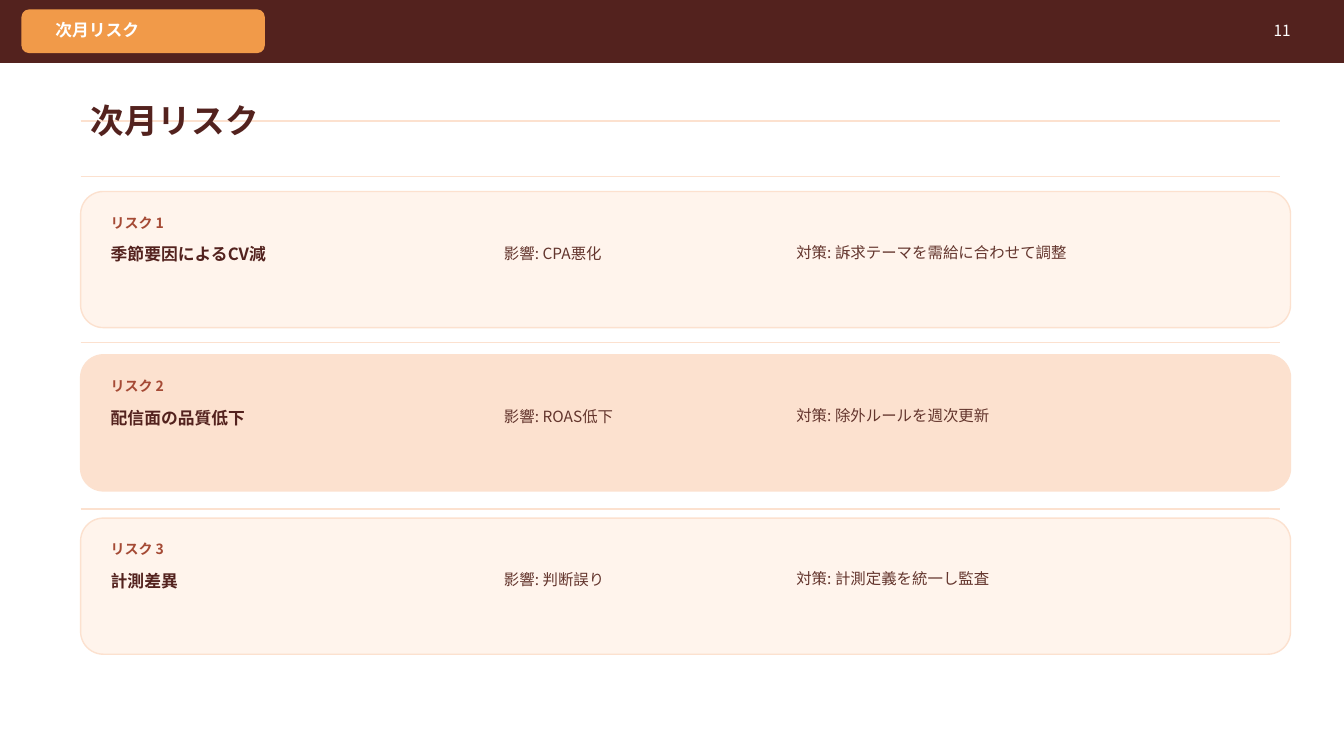
from pptx import Presentation
from pptx.dml.color import RGBColor
from pptx.enum.shapes import MSO_CONNECTOR, MSO_SHAPE
from pptx.enum.text import MSO_ANCHOR, MSO_AUTO_SIZE, PP_ALIGN
from pptx.oxml.ns import qn
from pptx.util import Inches, Pt

LEFT, RIGHT = PP_ALIGN.LEFT, PP_ALIGN.RIGHT
TOP, MIDDLE = MSO_ANCHOR.TOP, MSO_ANCHOR.MIDDLE
RECTANGLE, ROUNDED = MSO_SHAPE.RECTANGLE, MSO_SHAPE.ROUNDED_RECTANGLE
STRAIGHT = MSO_CONNECTOR.STRAIGHT
NO_AUTOFIT = MSO_AUTO_SIZE.NONE

BODY_FONT, TITLE_FONT = "Noto Sans CJK JP", "Karla"
BROWN, ORANGE, WHITE = "53221E", "F19A49", "FFFFFF"
CREAM, PEACH, RUST, TEXT_BROWN = "FFF4EC", "FCE1CF", "A54A35", "63352D"

SLIDE_WIDTH, SLIDE_HEIGHT = 13.33, 7.5
MARGIN = 0.8
CARD_TOP, CARD_WIDTH, CARD_HEIGHT, CARD_STEP = 1.9, 12, 1.35, 1.62
RULE_WIDTH = 11.9
RULE_TOPS = [1.2] + [1.75 + 1.65 * index for index in range(3)]

RISKS = [
    ("季節要因によるCV減", "CPA悪化", "訴求テーマを需給に合わせて調整", CREAM),
    ("配信面の品質低下", "ROAS低下", "除外ルールを週次更新", PEACH),
    ("計測差異", "判断誤り", "計測定義を統一し監査", CREAM),
]


def color(hex_string):
    return RGBColor.from_string(hex_string)


def format_text(shape, text, size=11, fill=TEXT_BROWN, bold=False,
                font_name=BODY_FONT, align=LEFT, anchor=MIDDLE):
    frame = shape.text_frame
    frame.word_wrap = True
    frame.auto_size = NO_AUTOFIT
    frame.vertical_anchor = anchor
    paragraph = frame.paragraphs[0]
    paragraph.alignment = align
    run = paragraph.add_run()
    run.text = text
    font = run.font
    font.name, font.size, font.bold = font_name, Pt(size), bold
    font.color.rgb = color(fill)
    # Japanese glyphs take the East Asian font
    east_asian = run._r.get_or_add_rPr().makeelement(qn("a:ea"), {"typeface": BODY_FONT})
    run._r.rPr.find(qn("a:latin")).addnext(east_asian)


def add_text(slide, text, left, top, width, height, **text_format):
    box = slide.shapes.add_textbox(Inches(left), Inches(top), Inches(width), Inches(height))
    format_text(box, text, **text_format)


def add_panel(slide, kind, left, top, width, height, fill, line):
    panel = slide.shapes.add_shape(kind, Inches(left), Inches(top), Inches(width), Inches(height))
    panel.shadow.inherit = False
    panel.fill.solid()
    panel.fill.fore_color.rgb = color(fill)
    panel.line.color.rgb = color(line)
    panel.line.width = Pt(1)


def add_rule(slide, left, top, width):
    rule = slide.shapes.add_connector(
        STRAIGHT, Inches(left), Inches(top), Inches(left + width), Inches(top))
    rule.line.color.rgb = color(PEACH)
    rule.line.width = Pt(1)
    properties = rule._element.spPr
    properties.append(properties.makeelement(qn("a:effectLst"), {}))


def add_header(slide, left, top, width, height):
    add_panel(slide, RECTANGLE, left, top, width, height, BROWN, BROWN)
    add_panel(slide, ROUNDED, left + 0.22, top + 0.1, 2.4, 0.42, ORANGE, ORANGE)
    add_text(slide, "次月リスク", left + 0.45, top + 0.18, 8.8, 0.24,
             size=12, fill=WHITE, bold=True)
    add_text(slide, "11", left + width - 1.18, top + 0.18, 0.75, 0.24,
             fill=WHITE, align=RIGHT)


def place_title(slide, left, top, width, height):
    title = slide.shapes.title
    title.left, title.top = Inches(left), Inches(top)
    title.width, title.height = Inches(width), Inches(height)
    format_text(title, "次月リスク", size=24, fill=BROWN, bold=True, font_name=TITLE_FONT)
    # Bring the title in front of the rule that runs behind it
    slide.shapes._spTree.append(title._element)


def add_risk_card(slide, left, top, width, height, number, risk):
    name, impact, measure, fill = risk
    add_panel(slide, ROUNDED, left, top, width, height, fill, PEACH)
    add_text(slide, f"リスク {number}", left + 0.2, top + 0.2, 1.2, 0.22,
             size=10, fill=RUST, bold=True)
    row_top = top + 0.46
    add_text(slide, name, left + 0.2, row_top, 3.7, 0.32, size=12, fill=BROWN, bold=True)
    add_text(slide, f"影響: {impact}", left + 4.1, row_top, 2.8, 0.3)
    add_text(slide, f"対策: {measure}", left + 7, row_top, 4.8, 0.58, anchor=TOP)


def main():
    presentation = Presentation()
    presentation.slide_width = Inches(SLIDE_WIDTH)
    presentation.slide_height = Inches(SLIDE_HEIGHT)
    slide = presentation.slides.add_slide(presentation.slide_layouts.get_by_name("Title Only"))

    # Background rules
    for top in RULE_TOPS:
        add_rule(slide, MARGIN, top, RULE_WIDTH)

    # Header and title
    add_header(slide, 0, 0, SLIDE_WIDTH, 0.62)
    place_title(slide, MARGIN, 0.95, 11.4, 0.48)

    # Risk cards
    for index, risk in enumerate(RISKS):
        add_risk_card(slide, MARGIN, CARD_TOP + index * CARD_STEP,
                      CARD_WIDTH, CARD_HEIGHT, index + 1, risk)

    presentation.save("out.pptx")


if __name__ == "__main__":
    main()
